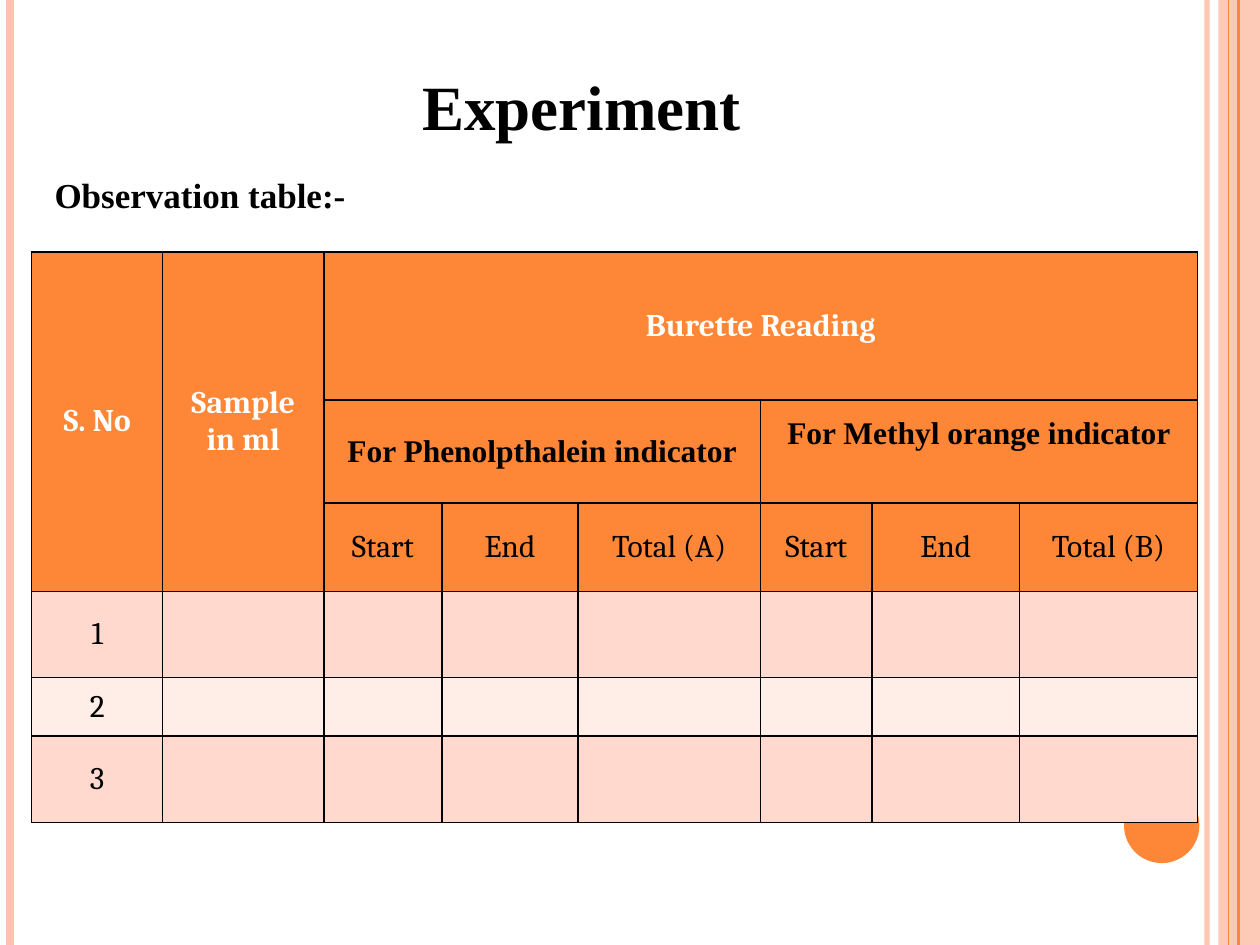
from lxml import etree
from pptx import Presentation
from pptx.dml.color import RGBColor
from pptx.enum.shapes import MSO_CONNECTOR as CONN, MSO_SHAPE as SHAPE
from pptx.enum.text import MSO_ANCHOR as ANCHOR, PP_ALIGN as ALIGN
from pptx.oxml import parse_xml
from pptx.oxml.ns import nsdecls, qn
from pptx.util import Cm, Pt

ORANGE, PEACH, BLACK, WHITE = "FE8637", "FEC3AE", "000000", "FFFFFF"
SERIF, CAMBRIA = "Times New Roman", "Cambria"


def paint(fill, color, alpha=100):
    fill.solid()
    fill.fore_color.rgb = RGBColor.from_string(color)
    if alpha < 100:
        for clr in fill._xPr.iter(qn("a:srgbClr")):
            etree.SubElement(clr, qn("a:alpha")).set("val", str(alpha * 1000))


def style(p, size, color, name=SERIF, bold=True, align=ALIGN.LEFT):
    p.alignment = align
    p.font.size, p.font.name, p.font.bold = Pt(size), name, bold
    paint(p.font.fill, color)


prs = Presentation()
prs.slide_width, prs.slide_height = Cm(25.4), Cm(19.05)
s = prs.slides.add_slide(prs.slide_layouts[5])

# Side bands: vertical rules, the right strip and the round badge
strip = s.shapes.add_shape(SHAPE.RECTANGLE, Cm(24.56), 0, Cm(0.84), prs.slide_height)
badge = s.shapes.add_shape(SHAPE.OVAL, Cm(22.66), Cm(15.88), Cm(1.52), Cm(1.52))
for sp, color, alpha in [(strip, PEACH, 87), (badge, ORANGE, 100)]:
    sp.shadow.inherit = False
    sp.line.fill.background()
    paint(sp.fill, color, alpha)

for x, color, width, alpha in [(24.33, PEACH, 3, 93), (0.2, PEACH, 4.5, 100),
                               (24.97, ORANGE, 1.5, 100), (24.77, ORANGE, 0.75, 100)]:
    rule = s.shapes.add_connector(CONN.STRAIGHT, Cm(x), 0, Cm(x), prs.slide_height)
    rule.line.width = Pt(width)
    paint(rule.line.fill, color, alpha)
    etree.SubElement(rule._element.spPr, qn("a:effectLst"))

# Title
title = s.shapes.title
title.left, title.top, title.width, title.height = Cm(8.26), Cm(1.06), Cm(7.62), Cm(2.12)
title.text_frame.text = "Experiment"
title.text_frame.vertical_anchor = ANCHOR.MIDDLE
style(title.text_frame.paragraphs[0], 36, BLACK)

# Table caption
tf = s.shapes.add_textbox(Cm(0.85), Cm(2.96), Cm(23.07), Cm(1.4)).text_frame
tf.word_wrap = True
tf.text = "Observation table:-"
tf.paragraphs[0].line_spacing = 1.5
style(tf.paragraphs[0], 20, BLACK, align=ALIGN.JUSTIFY)

# Observation table
col_widths = [2.64, 3.25, 2.38, 2.74, 3.68, 2.25, 2.97, 3.59]
row_heights = [2.98, 2.08, 1.76, 1.74, 1.18, 1.74]
row_fills = [ORANGE] * 3 + ["FFD9CE", "FFEDE8", "FFD9CE"]
table = s.shapes.add_table(len(row_heights), len(col_widths), Cm(0.64), Cm(5.08),
                           Cm(sum(col_widths)), Cm(sum(row_heights))).table
for col, width in zip(table.columns, col_widths):
    col.width = Cm(width)
for row, height in zip(table.rows, row_heights):
    row.height = Cm(height)

# Merged header blocks: first row, first column, last row, last column
for top, left, bottom, right in [(0, 0, 2, 0), (0, 1, 2, 1), (0, 2, 0, 7),
                                 (1, 2, 1, 4), (1, 5, 1, 7)]:
    table.cell(top, left).merge(table.cell(bottom, right))

rows = [
    ["S. No", "Sample in ml", "Burette Reading"],
    ["", "", "For Phenolpthalein indicator", "", "", "For Methyl orange indicator"],
    ["", "", "Start", "End", "Total (A)", "Start", "End", "Total (B)"],
    ["1"], ["2"], ["3"],
]
for r, texts in enumerate(rows):
    for c in range(len(col_widths)):
        cell = table.cell(r, c)
        cell.vertical_anchor = ANCHOR.MIDDLE
        if c < len(texts):
            cell.text = texts[c]
        style(cell.text_frame.paragraphs[0], 18, WHITE if r == 0 else BLACK,
              SERIF if r == 1 else CAMBRIA, r < 2, ALIGN.CENTER)
        # Borders come before the fill in the cell properties
        for side in ("lnL", "lnR", "lnT", "lnB"):
            cell._tc.get_or_add_tcPr().append(parse_xml(
                f'<a:{side} {nsdecls("a")} w="12700"><a:solidFill>'
                f'<a:srgbClr val="{BLACK}"/></a:solidFill></a:{side}>'))
        paint(cell.fill, row_fills[r])

# The methyl orange heading sits above the middle of its cell
table.cell(1, 5).margin_bottom = Cm(0.85)

prs.save("out.pptx")
